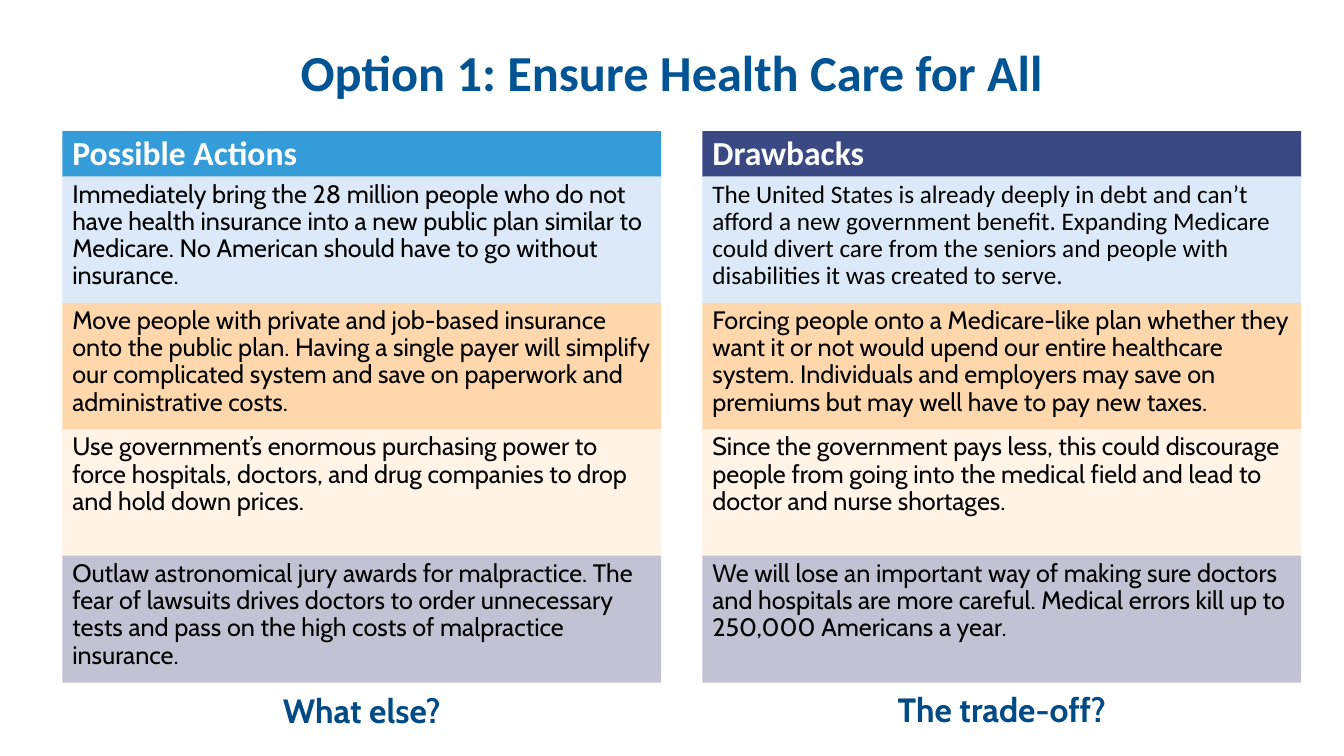
from dataclasses import dataclass

from lxml import etree
from pptx import Presentation
from pptx.dml.color import RGBColor
from pptx.enum import shapes, text
from pptx.oxml import ns
from pptx.util import Pt

COLUMN_WIDTH = 427.7
HEADER_TOP, HEADER_HEIGHT = 93.6, 33
ROWS_TOP, ROW_PITCH, ROW_HEIGHT = 126, 90.3, 90.7
QUESTION_HEIGHT = 36
ROW_FILLS = ["DCE9F8", "FFD7AC", "FFF4E6", "C3C2D4"]


@dataclass(frozen=True)
class Box:
    left: float
    top: float
    width: float
    height: float


@dataclass(frozen=True)
class Style:
    size: float
    font: str
    color: str
    bold: bool = False
    anchor: text.MSO_ANCHOR = text.MSO_ANCHOR.TOP
    align: text.PP_ALIGN = text.PP_ALIGN.LEFT
    line_spacing: float = 0.9
    space_before: float = 0


@dataclass(frozen=True)
class Column:
    left: float
    heading: str
    heading_fill: str
    heading_opacity: int
    first_row_font: str
    rows: list[str]
    question: str
    question_top: float


TITLE = Style(36, "Calibri", "005493", True, text.MSO_ANCHOR.MIDDLE, text.PP_ALIGN.CENTER)
HEADING = Style(24, "Calibri", "FFFFFF", True, text.MSO_ANCHOR.BOTTOM, space_before=10)
QUESTION = Style(24, "Cabin", "004A85", True, align=text.PP_ALIGN.CENTER, line_spacing=1)

COLUMNS = [
    Column(
        44.6, "Possible Actions", "359CDA", 100, "Cabin",
        [
            "Immediately bring the 28 million people who do not have health insurance into a new "
            "public plan similar to Medicare. No American should have to go without insurance.",
            "Move people with private and job-based insurance onto the public plan. Having a single "
            "payer will simplify our complicated system and save on paperwork and administrative costs.",
            "Use government’s enormous purchasing power to force hospitals, doctors, and drug "
            "companies to drop and hold down prices.",
            "Outlaw astronomical jury awards for malpractice. The fear of lawsuits drives doctors to "
            "order unnecessary tests and pass on the high costs of malpractice insurance.",
        ],
        "What else?", 489.6,
    ),
    Column(
        501.8, "Drawbacks", "273777", 91, "Calibri",
        [
            "The United States is already deeply in debt and can’t afford a new government benefit. "
            "Expanding Medicare could divert care from the seniors and people with disabilities it "
            "was created to serve.",
            "Forcing people onto a Medicare-like plan whether they want it or not would upend our "
            "entire healthcare system. Individuals and employers may save on premiums but may well "
            "have to pay new taxes.",
            "Since the government pays less, this could discourage people from going into the "
            "medical field and lead to doctor and nurse shortages.",
            "We will lose an important way of making sure doctors and hospitals are more careful. "
            "Medical errors kill up to 250,000 Americans a year.",
        ],
        "The trade-off?", 488.9,
    ),
]


def rgb(color: str) -> RGBColor:
    return RGBColor.from_string(color)


def write_text(shape, content: str, style: Style) -> None:
    frame = shape.text_frame
    paragraph = frame.paragraphs[0]
    run = paragraph.add_run()
    formats = [
        (frame, {"word_wrap": True, "vertical_anchor": style.anchor}),
        (paragraph, {"alignment": style.align, "line_spacing": style.line_spacing,
                     "space_before": Pt(style.space_before)}),
        (run, {"text": content}),
        (run.font, {"name": style.font, "size": Pt(style.size), "bold": style.bold}),
    ]
    for target, values in formats:
        for name, value in values.items():
            setattr(target, name, value)
    run.font.color.rgb = rgb(style.color)


def add_label(slide, box: Box, content: str, style: Style) -> None:
    label = slide.shapes.add_textbox(Pt(box.left), Pt(box.top), Pt(box.width), Pt(box.height))
    write_text(label, content, style)


def add_panel(slide, box: Box, fill: str, content: str, style: Style, opacity: int = 100) -> None:
    """Draw a filled rectangle with text; opacity is a percentage."""
    panel = slide.shapes.add_shape(
        shapes.MSO_SHAPE.RECTANGLE, Pt(box.left), Pt(box.top), Pt(box.width), Pt(box.height))
    panel.shadow.inherit = False
    panel.line.fill.background()
    panel.fill.solid()
    panel.fill.fore_color.rgb = rgb(fill)
    if opacity < 100:
        color = panel.fill._xPr.find(ns.qn("a:solidFill"))[0]
        etree.SubElement(color, ns.qn("a:alpha"), val=str(opacity * 1000))
    write_text(panel, content, style)


def add_column(slide, column: Column) -> None:
    heading_box = Box(column.left, HEADER_TOP, COLUMN_WIDTH, HEADER_HEIGHT)
    add_panel(slide, heading_box, column.heading_fill, column.heading, HEADING,
              column.heading_opacity)
    for index, (fill, content) in enumerate(zip(ROW_FILLS, column.rows)):
        font = "Cabin" if index else column.first_row_font
        row_box = Box(column.left, ROWS_TOP + index * ROW_PITCH, COLUMN_WIDTH, ROW_HEIGHT)
        add_panel(slide, row_box, fill, content, Style(18, font, "000000", space_before=10))
    question_box = Box(column.left, column.question_top, COLUMN_WIDTH, QUESTION_HEIGHT)
    add_label(slide, question_box, column.question, QUESTION)


def main() -> None:
    presentation = Presentation()
    presentation.slide_width, presentation.slide_height = Pt(960), Pt(540)
    slide = presentation.slides.add_slide(presentation.slide_layouts[6])
    add_label(slide, Box(66, 28.8, 828, 50.4), "Option 1: Ensure Health Care for All", TITLE)
    for column in COLUMNS:
        add_column(slide, column)
    presentation.save("out.pptx")


if __name__ == "__main__":
    main()
